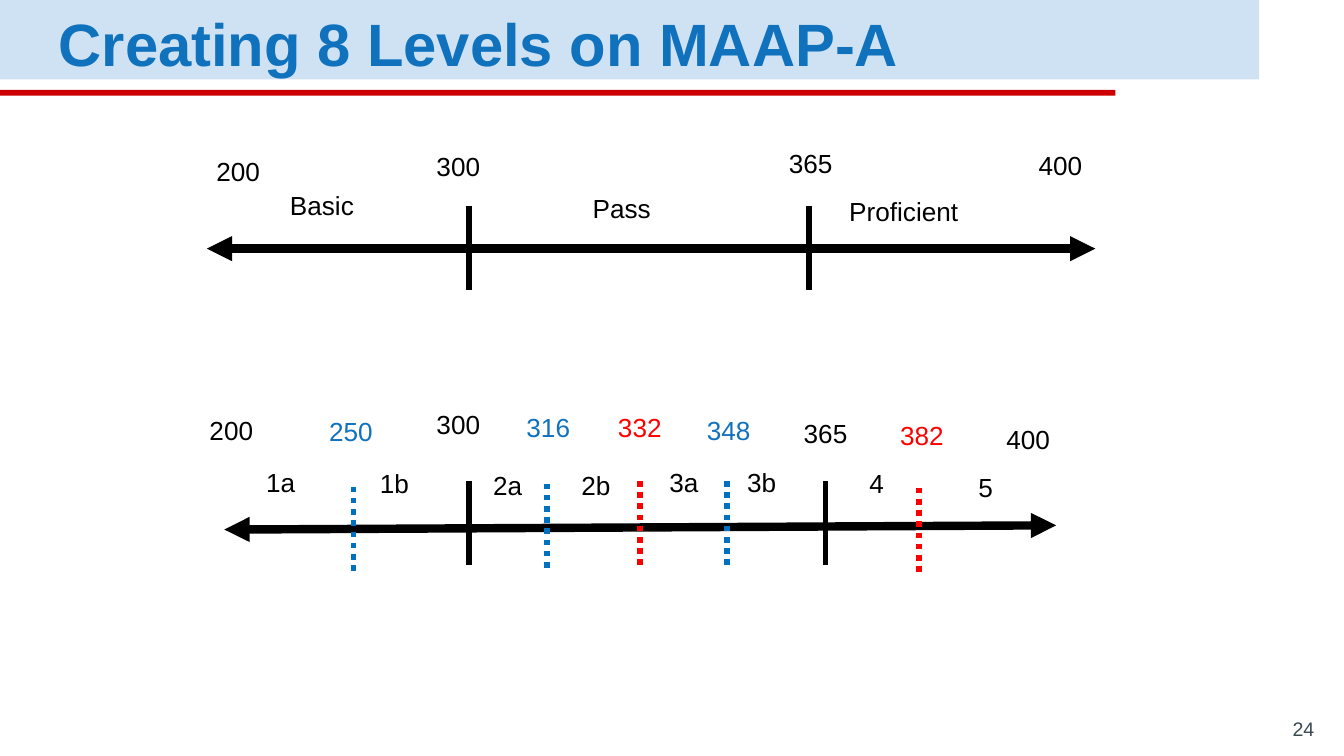
from dataclasses import dataclass

from pptx import Presentation
from pptx import util as u
from pptx.dml.color import RGBColor
from pptx.enum import dml, shapes, text
from pptx.oxml.ns import qn
from lxml import etree


@dataclass(frozen=True)
class Theme:
    font: str = "Arial"
    band: str = "CFE2F3"
    stripe: str = "CC0000"
    title: str = "1071BD"
    black: str = "000000"
    red: str = "FF0000"
    blue: str = "0070C0"
    number: str = "3A4950"
    title_size: float = 32
    label_size: float = 14
    number_size: float = 10.5
    axis_width: float = 4.5
    tick_width: float = 3


THEME = Theme()
TICK_LENGTH = 1.59
LABEL_HEIGHT = 0.86
WIDE, NARROW = 2.31, 1.55


def style_paragraph(paragraph, size, color, bold=False):
    font = paragraph.font
    font.name, font.size, font.bold = THEME.font, u.Pt(size), bold
    font.color.rgb = RGBColor.from_string(color)


def add_bar(slide, top, width, height, color):
    bar = slide.shapes.add_shape(
        shapes.MSO_SHAPE.RECTANGLE, 0, u.Cm(top), u.Cm(width), u.Cm(height))
    bar.shadow.inherit = False
    bar.fill.solid()
    bar.fill.fore_color.rgb = RGBColor.from_string(color)
    bar.line.fill.background()
    slide.shapes.title.element.addprevious(bar.element)


def set_title(slide, wording):
    title = slide.shapes.title
    title.left, title.top = u.Cm(0.86), u.Cm(0.08)
    title.width, title.height = u.Cm(22.94), u.Cm(1.24)
    frame = title.text_frame
    frame.text = wording
    frame.word_wrap = True
    frame.auto_size = text.MSO_AUTO_SIZE.NONE
    frame.vertical_anchor = text.MSO_ANCHOR.MIDDLE
    frame.margin_left = frame.margin_right = u.Cm(0.25)
    frame.margin_top = frame.margin_bottom = u.Cm(0.25)
    paragraph = frame.paragraphs[0]
    paragraph.alignment = text.PP_ALIGN.LEFT
    paragraph.line_spacing = 1.15
    paragraph.space_after = u.Pt(16)
    style_paragraph(paragraph, THEME.title_size, THEME.title, bold=True)


def add_label(slide, wording, left, top, width=WIDE, color=THEME.black):
    box = slide.shapes.add_textbox(
        u.Cm(left), u.Cm(top), u.Cm(width), u.Cm(LABEL_HEIGHT))
    frame = box.text_frame
    frame.word_wrap = True
    frame.auto_size = text.MSO_AUTO_SIZE.SHAPE_TO_FIT_TEXT
    frame.text = wording
    style_paragraph(frame.paragraphs[0], THEME.label_size, color)


def add_page_number(slide, number):
    box = slide.shapes.add_textbox(u.Cm(23.57), u.Cm(13.56), u.Cm(1.52), u.Cm(0.66))
    frame = box.text_frame
    frame.word_wrap = True
    frame.vertical_anchor = text.MSO_ANCHOR.BOTTOM
    frame.margin_top = frame.margin_bottom = u.Cm(0.25)
    frame.text = number
    paragraph = frame.paragraphs[0]
    paragraph.alignment = text.PP_ALIGN.RIGHT
    style_paragraph(paragraph, THEME.number_size, THEME.number)


def add_line(slide, start, end, width, color=THEME.black):
    connector = slide.shapes.add_connector(
        shapes.MSO_CONNECTOR.STRAIGHT, *(u.Cm(value) for value in (*start, *end)))
    connector.line.width = u.Pt(width)
    connector.line.color.rgb = RGBColor.from_string(color)
    etree.SubElement(connector.element.spPr, qn("a:effectLst"))
    return connector


def add_axis(slide, start, end):
    axis = add_line(slide, start, end, THEME.axis_width)
    outline = axis.element.spPr.find(qn("a:ln"))
    for tag in ("a:headEnd", "a:tailEnd"):
        etree.SubElement(outline, qn(tag), type="triangle")


def add_tick(slide, x, top, color=THEME.black):
    tick = add_line(slide, (x, top), (x, top + TICK_LENGTH), THEME.tick_width, color)
    if color != THEME.black:
        tick.line.dash_style = dml.MSO_LINE.ROUND_DOT


def add_scale(slide, start, end, ticks, labels):
    add_axis(slide, start, end)
    for tick in ticks:
        add_tick(slide, *tick)
    for label in labels:
        add_label(slide, *label)


def main():
    presentation = Presentation()
    presentation.slide_width, presentation.slide_height = u.Cm(25.4), u.Cm(14.29)
    slide = presentation.slides.add_slide(presentation.slide_layouts[5])
    add_bar(slide, 0, 23.8, 1.5, THEME.band)
    add_bar(slide, 1.7, 21.08, 0.11, THEME.stripe)
    set_title(slide, "Creating 8 Levels on MAAP-A")
    add_page_number(slide, "24")

    three_level_ticks = [(8.86, 3.89), (15.29, 3.89)]
    three_level_labels = [
        ("200", 3.84, 2.82),
        ("300", 8, 2.72),
        ("365", 14.66, 2.67),
        ("400", 19.38, 2.69),
        ("Basic", 5.23, 3.45),
        ("Pass", 10.95, 3.51),
        ("Proficient", 15.8, 3.56, 3.02),
    ]
    add_scale(slide, (3.91, 4.7), (20.7, 4.7), three_level_ticks, three_level_labels)

    eight_level_ticks = [
        (6.68, 9.2, THEME.blue),
        (8.86, 9.09),
        (10.34, 9.14, THEME.blue),
        (12.09, 9.09, THEME.red),
        (13.74, 9.09, THEME.blue),
        (15.6, 9.09),
        (17.37, 9.22, THEME.red),
    ]
    eight_level_labels = [
        ("200", 3.71, 7.7),
        ("250", 5.97, 7.72, WIDE, THEME.title),
        ("300", 8, 7.59),
        ("316", 9.7, 7.65, WIDE, THEME.title),
        ("332", 11.43, 7.65, WIDE, THEME.red),
        ("348", 13.11, 7.7, NARROW, THEME.title),
        ("365", 14.94, 7.77, 1.88),
        ("382", 16.76, 7.8, WIDE, THEME.red),
        ("400", 18.77, 7.87),
        ("1a", 4.78, 8.69, NARROW),
        ("1b", 6.93, 8.71, NARROW),
        ("2a", 9.07, 8.74, NARROW),
        ("2b", 10.74, 8.74, NARROW),
        ("3a", 12.4, 8.69, NARROW),
        ("3b", 13.87, 8.69, NARROW),
        ("4", 16.18, 8.71, 1.19),
        ("5", 18.24, 8.79, 1.14),
    ]
    add_scale(slide, (4.24, 10.01), (19.96, 9.93), eight_level_ticks, eight_level_labels)

    presentation.save("out.pptx")


if __name__ == "__main__":
    main()
